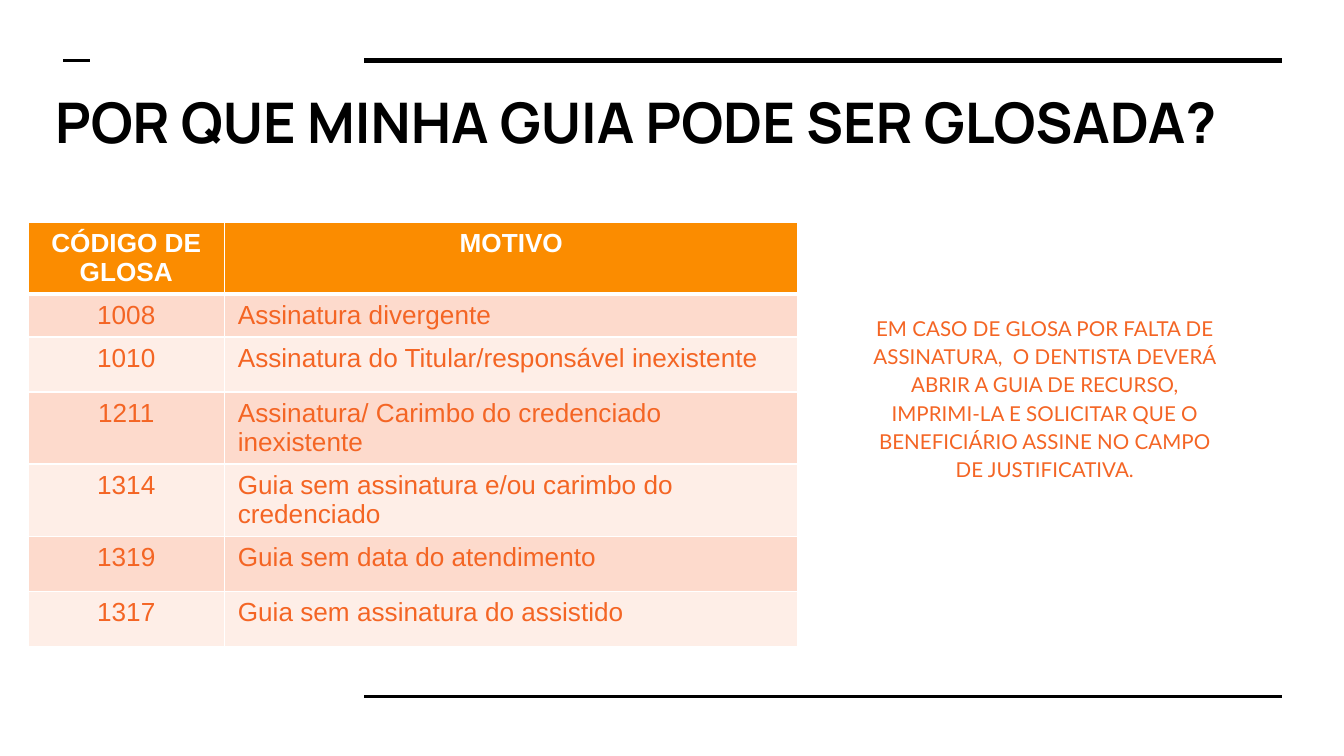
from lxml import etree
from pptx import Presentation
from pptx.dml.color import RGBColor
from pptx.enum.shapes import MSO_CONNECTOR, MSO_SHAPE
from pptx.enum.text import MSO_ANCHOR, MSO_AUTO_SIZE, PP_ALIGN
from pptx.oxml.ns import qn
from pptx.util import Inches, Pt

STRAIGHT = MSO_CONNECTOR.STRAIGHT
RECTANGLE = MSO_SHAPE.RECTANGLE
TOP, MIDDLE = MSO_ANCHOR.TOP, MSO_ANCHOR.MIDDLE
LEFT, CENTER = PP_ALIGN.LEFT, PP_ALIGN.CENTER
NO_AUTOFIT = MSO_AUTO_SIZE.NONE

BLACK, WHITE, ORANGE = "000000", "FFFFFF", "F46524"
HEADER_FILL = "FB8C00"
BAND_FILLS = ["FDDACC", "FEEEE7"]

TITLE = "POR QUE MINHA GUIA PODE SER GLOSADA?"
NOTE = (
    "EM CASO DE GLOSA POR FALTA DE ASSINATURA,  O DENTISTA DEVERÁ ABRIR A GUIA "
    "DE RECURSO, IMPRIMI-LA E SOLICITAR QUE O BENEFICIÁRIO ASSINE NO CAMPO DE "
    "JUSTIFICATIVA."
)
REASONS = [
    ("CÓDIGO DE GLOSA", "MOTIVO"),
    ("1008", "Assinatura divergente"),
    ("1010", "Assinatura do Titular/responsável inexistente"),
    ("1211", "Assinatura/ Carimbo do credenciado inexistente"),
    ("1314", "Guia sem assinatura e/ou carimbo do credenciado"),
    ("1319", "Guia sem data do atendimento"),
    ("1317", "Guia sem assinatura do assistido"),
]
CODE_WIDTH = 1.46
ROW_HEIGHT = 0.41
COMPACT_ROW = 1


def rgb(color):
    return RGBColor.from_string(color)


def style_paragraph(paragraph, font_name, size, color, align, bold=False):
    paragraph.alignment = align
    font = paragraph.font
    font.name, font.size, font.bold = font_name, Pt(size), bold
    font.color.rgb = rgb(color)


def set_insets(frame, inset):
    frame.margin_left = frame.margin_right = Inches(inset)
    frame.margin_top = frame.margin_bottom = Inches(inset)


def add_rule(slide, left, right, y, weight):
    rule = slide.shapes.add_connector(
        STRAIGHT, Inches(left), Inches(y), Inches(right), Inches(y)
    )
    rule.line.color.rgb = rgb(BLACK)
    rule.line.width = Pt(weight)
    etree.SubElement(rule._element.spPr, qn("a:effectLst"))


def add_frame_rules(slide, left, top, width, height):
    right, bottom = left + width, top + height
    body_left = left + 2.24
    add_rule(slide, body_left, right, top, 3)
    add_rule(slide, body_left, right, bottom, 1.5)
    add_rule(slide, left, left + 0.2, top, 1.5)


def fill_title(slide, left, top, width, height):
    title = slide.shapes.title
    title.left, title.top = Inches(left), Inches(top)
    title.width, title.height = Inches(width), Inches(height)
    frame = title.text_frame
    frame.text = TITLE
    frame.auto_size = NO_AUTOFIT
    frame.vertical_anchor = TOP
    set_insets(frame, 0.1)
    style_paragraph(frame.paragraphs[0], "Manrope", 30, BLACK, LEFT, True)


def add_cell_border(cell, side, weight):
    properties = cell._tc.get_or_add_tcPr()
    border = etree.SubElement(properties, qn(f"a:ln{side}"), w=str(Pt(weight)))
    solid = etree.SubElement(border, qn("a:solidFill"))
    etree.SubElement(solid, qn("a:srgbClr"), val=WHITE)


def format_cell(cell, text, row, column):
    is_header = row == 0
    for side in "LRTB":
        under_header = (row, side) in [(0, "B"), (1, "T")]
        add_cell_border(cell, side, 3 if under_header else 1)
    cell.fill.solid()
    cell.fill.fore_color.rgb = rgb(HEADER_FILL if is_header else BAND_FILLS[(row - 1) % 2])
    cell.text = text
    style_paragraph(
        cell.text_frame.paragraphs[0],
        "Arial",
        14,
        WHITE if is_header else ORANGE,
        CENTER if is_header or column == 0 else LEFT,
        is_header,
    )


def add_reasons_table(slide, left, top, width, height):
    holder = slide.shapes.add_table(
        len(REASONS), 2, Inches(left), Inches(top), Inches(width), Inches(height)
    )
    table = holder.table
    table.columns[0].width = Inches(CODE_WIDTH)
    table.columns[1].width = Inches(width - CODE_WIDTH)
    for row, reason in enumerate(REASONS):
        table.rows[row].height = Inches(0 if row == COMPACT_ROW else ROW_HEIGHT)
        for column, text in enumerate(reason):
            format_cell(table.cell(row, column), text, row, column)
    holder.height = Inches(height)


def add_note(slide, left, top, width, height):
    note = slide.shapes.add_shape(
        RECTANGLE, Inches(left), Inches(top), Inches(width), Inches(height)
    )
    note.shadow.inherit = False
    note.fill.solid()
    note.fill.fore_color.rgb = rgb(WHITE)
    note.line.color.rgb = rgb(WHITE)
    note.line.width = Pt(0.75)
    frame = note.text_frame
    frame.text = NOTE
    frame.word_wrap = True
    frame.vertical_anchor = MIDDLE
    set_insets(frame, 0.1)
    frame.margin_bottom = Inches(0.31)
    paragraph = frame.paragraphs[0]
    paragraph.line_spacing = 1.15
    style_paragraph(paragraph, "Lato", 11, ORANGE, CENTER)


def main():
    presentation = Presentation()
    presentation.slide_width = Inches(10)
    presentation.slide_height = Inches(10 * 9 / 16)
    slide = presentation.slides.add_slide(presentation.slide_layouts[5])
    add_frame_rules(slide, 0.47, 0.45, 9.07, 4.73)
    fill_title(slide, 0.31, 0.55, 9.23, 0.69)
    add_note(slide, 6.36, 1.83, 2.83, 2.46)
    add_reasons_table(slide, 0.21, 1.65, 5.73, 3.25)
    presentation.save("out.pptx")


if __name__ == "__main__":
    main()
